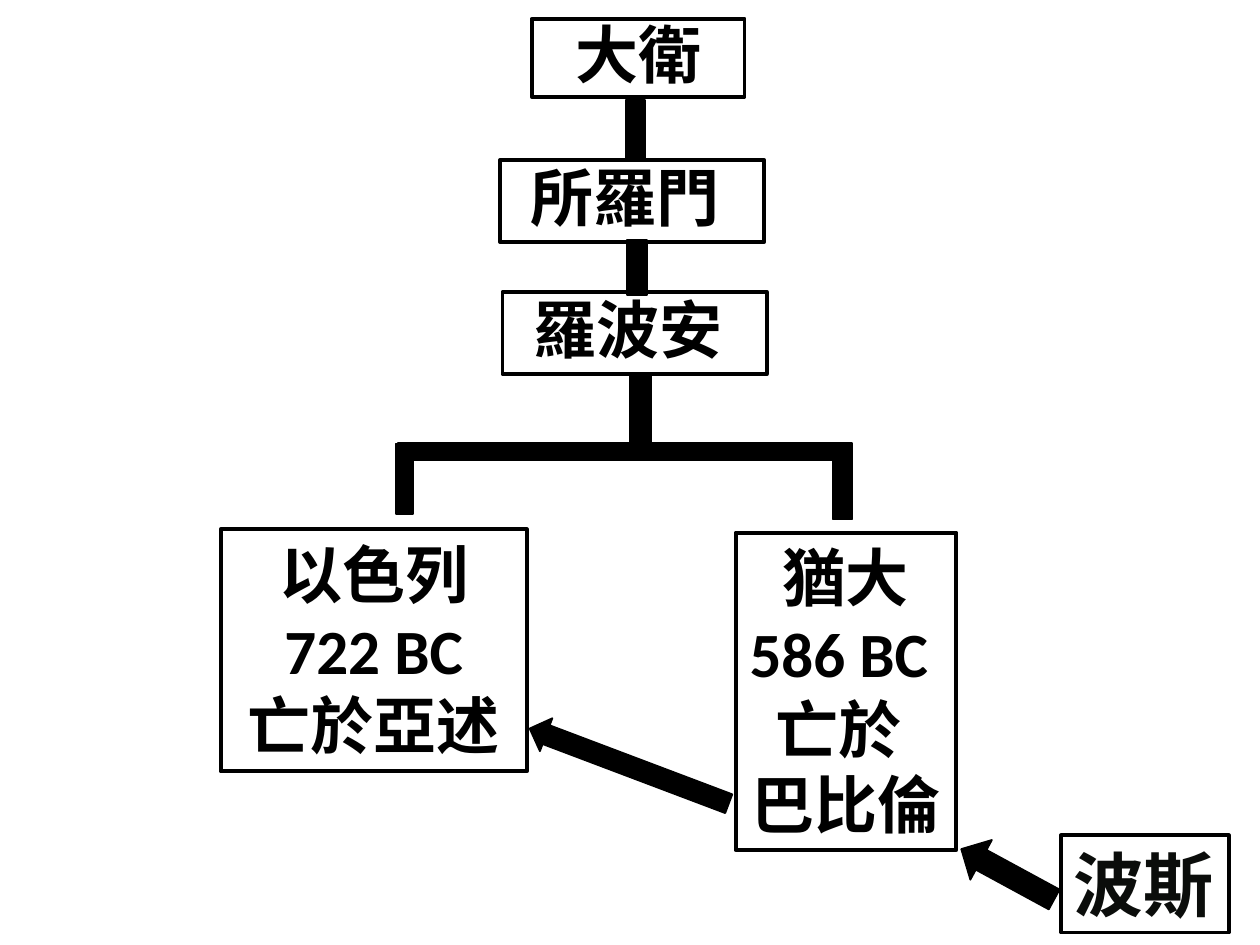
from dataclasses import dataclass

from pptx import Presentation
from pptx.dml.color import RGBColor
from pptx.enum.shapes import MSO_SHAPE as Preset
from pptx.enum.text import MSO_ANCHOR as Anchor
from pptx.enum.text import MSO_AUTO_SIZE as AutoSize
from pptx.enum.text import PP_ALIGN as Align
from pptx.util import Cm, Pt


@dataclass(frozen=True)
class Theme:
    font: str = "Calibri"
    ink: RGBColor = RGBColor(0x00, 0x00, 0x00)
    persia_ink: RGBColor = RGBColor(0x0B, 0x0D, 0x0B)
    name_size: Pt = Pt(36)
    persia_size: Pt = Pt(40)
    frame_width: Pt = Pt(2.25)
    bar_width: Pt = Pt(1)


THEME = Theme()

KINGS = [
    ("大衛", (10.72, 0.38, 4.29, 1.57)),
    ("所羅門 ", (10.08, 3.23, 5.33, 1.65)),
    ("羅波安 ", (10.13, 5.89, 5.33, 1.65)),
]
BRANCH_BAR = (6.38, 8.36, 12.45, 1.5)
UPRIGHT_BARS = [
    (11.99, 1.8, 1.63, 1.63),
    (12.09, 4.52, 1.5, 1.75),
    (11.91, 7.34, 2.01, 1.85),
    (7.19, 8.94, 1.93, 1.42),
    (16, 8.94, 1.96, 1.63),
]


def add_preset(page, preset, place):
    shape = page.shapes.add_shape(preset, *map(Cm, place))
    shape.shadow.inherit = False
    shape.line.color.rgb = THEME.ink
    return shape


def add_box(page, text, place, size=THEME.name_size, color=THEME.ink, align=Align.CENTER):
    box = add_preset(page, Preset.RECTANGLE, place)
    box.fill.background()
    box.line.width = THEME.frame_width
    frame = box.text_frame
    frame.text = text
    frame.word_wrap = True
    frame.vertical_anchor = Anchor.TOP
    for para in frame.paragraphs:
        para.alignment = align
        for span in para.runs:
            span.font.name = THEME.font
            span.font.size = size
            span.font.bold = True
            span.font.color.rgb = color
    return box


def add_king(page, name, place):
    frame = add_box(page, name, place).text_frame
    frame.vertical_anchor = Anchor.MIDDLE
    frame.paragraphs[0].line_spacing = 0.9


def add_kingdom(page, text, place, wrap=False, **style):
    frame = add_box(page, text, place, **style).text_frame
    frame.word_wrap = wrap
    frame.auto_size = AutoSize.SHAPE_TO_FIT_TEXT


def add_solid(page, preset, place, rotation=0):
    solid = add_preset(page, preset, place)
    solid.fill.solid()
    solid.fill.fore_color.rgb = THEME.ink
    solid.line.width = THEME.bar_width
    solid.rotation = rotation
    return solid


def main():
    deck = Presentation()
    deck.slide_width, deck.slide_height = Cm(25.4), Cm(19.05)
    page = deck.slides.add_slide(deck.slide_layouts[6])

    for name, place in KINGS:
        add_king(page, name, place)

    add_kingdom(page, "以色列\n722 BC\n亡於亞述", (4.45, 10.67, 6.17, 4.88), wrap=True)
    add_kingdom(page, "猶大\n586 BC \n亡於 \n巴比倫", (14.83, 10.74, 4.45, 6.4))
    add_kingdom(page, "波斯", (21.39, 16.84, 3.38, 1.96), size=THEME.persia_size,
                color=THEME.persia_ink, align=Align.LEFT)

    add_solid(page, Preset.MATH_MINUS, BRANCH_BAR)
    for place in UPRIGHT_BARS:
        add_solid(page, Preset.MATH_MINUS, place, 90)

    judah_arrow = add_solid(page, Preset.LEFT_ARROW, (10.54, 15.09, 4.29, 0.71), 20.7)
    judah_arrow.adjustments[0] = 0.57
    add_solid(page, Preset.LEFT_ARROW, (19.25, 17.17, 2.13, 0.91), 28.5)

    deck.save("out.pptx")


if __name__ == "__main__":
    main()
